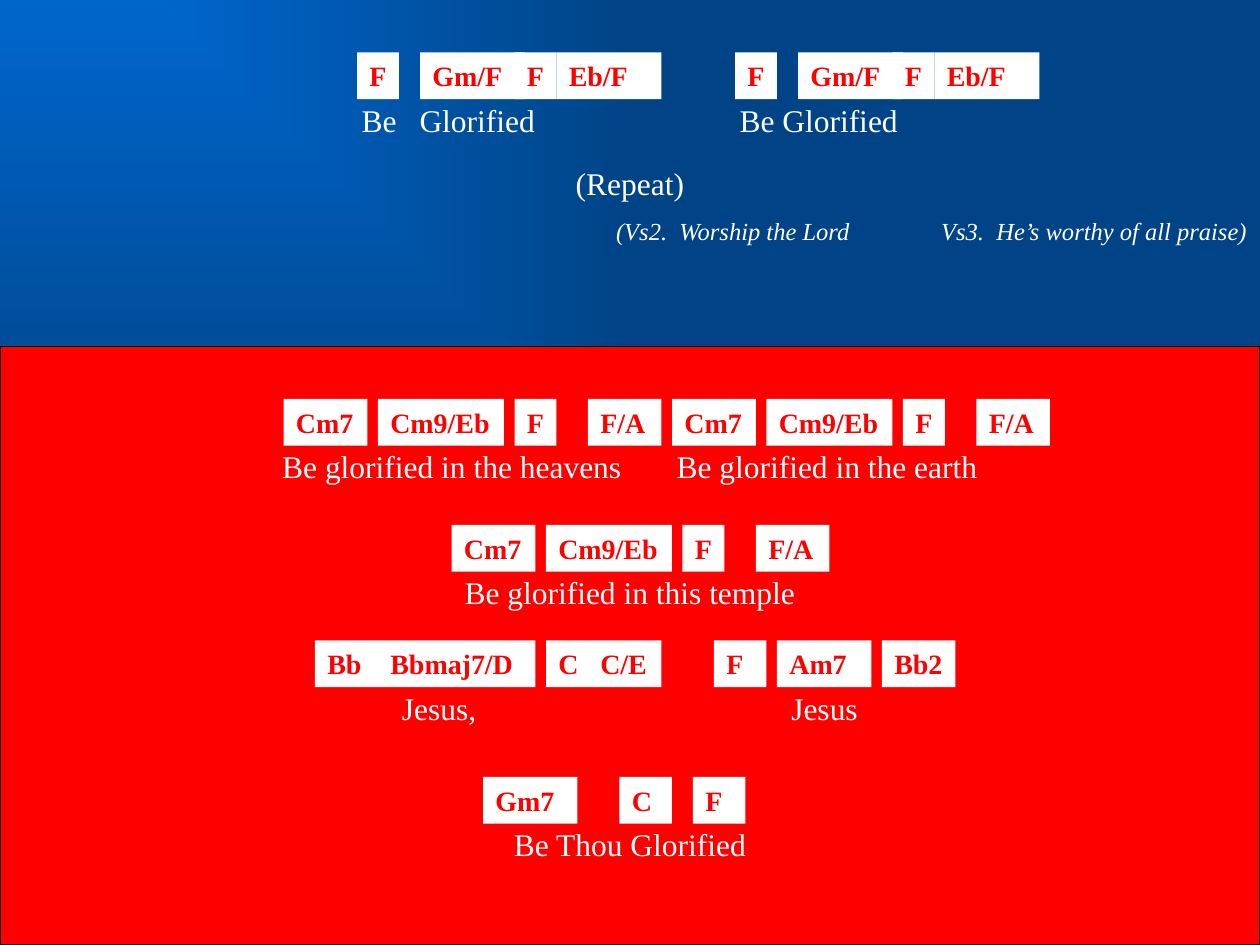
from lxml import etree
from pptx import Presentation
from pptx.dml.color import RGBColor
from pptx.enum.shapes import MSO_SHAPE
from pptx.enum.text import MSO_ANCHOR, MSO_AUTO_SIZE, PP_ALIGN
from pptx.oxml.ns import qn
from pptx.util import Inches, Pt

RECTANGLE = MSO_SHAPE.RECTANGLE
TOP = MSO_ANCHOR.TOP
GROW = MSO_AUTO_SIZE.SHAPE_TO_FIT_TEXT
LEFT, CENTER = PP_ALIGN.LEFT, PP_ALIGN.CENTER

COLORS = {"glow": "0066CC", "deep": "004487", "red": "FF0000",
          "white": "FFFFFF", "black": "000000"}
FONT = "Times New Roman"
LYRIC = {"size": Pt(18), "color": "white"}
VERSE_NOTE = {"size": Pt(14), "color": "white", "italic": True}
CHORD = {"size": Pt(16), "color": "red", "bold": True}

# Chords sit on a grid of twelfths of an inch: (name, offset, width)
GRID = 12
OPENING = [("F", 0, 4), ("Gm/F", 6, 10), ("F", 15, 4), ("Eb/F", 19, 10)]
GLORIFIED = [("Cm7", 0, 8), ("Cm9/Eb", 9, 12), ("F", 22, 4), ("F/A", 29, 7)]
JESUS = [("Bb", 0, 6), ("Bbmaj7/D", 6, 15), ("C", 22, 4), ("C/E", 26, 7),
         ("F", 38, 5), ("Am7", 44, 9), ("Bb2", 54, 7)]
ENDING = [("Gm7", 0, 9), ("C", 13, 5), ("F", 20, 5)]

# (top, left, chords), in grid units
CHORD_LINES = [(5, 34, OPENING), (5, 70, OPENING),
               (38, 27, GLORIFIED), (38, 64, GLORIFIED),
               (50, 43, GLORIFIED), (61, 30, JESUS), (74, 46, ENDING)]

# (top in grid units, height in inches, format, phrases with their left in
# inches; a line with one phrase and no left is centred)
LYRIC_LINES = [
    (9, 0.4, LYRIC, [("Be", 2.87), ("Glorified", 3.33), ("Be Glorified", 5.87)]),
    (15, 0.4, LYRIC, [("(Repeat)", None)]),
    (20, 0.33, VERSE_NOTE, [("(Vs2.  Worship the Lord", 4.89),
                            ("Vs3.  He’s worthy of all praise)", 7.47)]),
    (42, 0.4, LYRIC, [("Be glorified in the heavens", 2.24),
                      ("Be glorified in the earth", 5.37)]),
    (54, 0.4, LYRIC, [("Be glorified in this temple", None)]),
    (65, 0.4, LYRIC, [("Jesus,", 3.19), ("Jesus", 6.28)]),
    (78, 0.4, LYRIC, [("Be Thou Glorified", None)]),
]


def color(name):
    return RGBColor.from_string(COLORS[name])


def paint_background(slide):
    """Fill the slide with a gradient that spreads from the top left corner."""
    fill = slide.background.fill
    fill.gradient()
    for stop, (position, name) in zip(fill.gradient_stops,
                                      [(0, "glow"), (1, "deep")]):
        stop.position = position
        stop.color.rgb = color(name)
    gradient = slide.element.find(".//" + qn("a:gradFill"))
    gradient.remove(gradient.find(qn("a:lin")))
    spread = etree.Element(qn("a:path"), {"path": "rect"})
    etree.SubElement(spread, qn("a:fillToRect"), {"r": "100000", "b": "100000"})
    gradient.find(qn("a:gsLst")).addnext(spread)


def add_rectangle(slide, left, top, width, height, fill):
    shape = slide.shapes.add_shape(RECTANGLE, Inches(left), Inches(top),
                                   Inches(width), Inches(height))
    shape.shadow.inherit = False
    shape.fill.solid()
    shape.fill.fore_color.rgb = color(fill)
    return shape


def write(shape, text, style, alignment):
    frame = shape.text_frame
    frame_format = {"word_wrap": True, "auto_size": GROW,
                    "vertical_anchor": TOP, "margin_right": 0}
    if alignment == CENTER:
        del frame_format["margin_right"]
    for name, value in frame_format.items():
        setattr(frame, name, value)
    paragraph = frame.paragraphs[0]
    paragraph.alignment = alignment
    run = paragraph.add_run()
    run.text = text
    run.font.name = FONT
    for name, value in style.items():
        if name == "color":
            run.font.color.rgb = color(value)
        else:
            setattr(run.font, name, value)
    return paragraph


def add_lyric_line(slide, top, height, style, phrases):
    """Start each phrase at its own left: the first by inset, others by tab."""
    box = slide.shapes.add_textbox(0, Inches(top / GRID), Inches(10),
                                   Inches(height))
    start = phrases[0][1]
    text = "\t".join(phrase for phrase, _ in phrases)
    paragraph = write(box, text, style, CENTER if start is None else LEFT)
    if start is None:
        return
    box.text_frame.margin_left = Inches(start)
    properties = paragraph._p.get_or_add_pPr()
    tabs = etree.SubElement(properties, qn("a:tabLst"))
    for _, left in phrases[1:]:
        etree.SubElement(tabs, qn("a:tab"),
                         {"pos": str(Inches(left - start)), "algn": "l"})


def add_chord_line(slide, top, start, chords):
    for name, offset, width in chords:
        box = add_rectangle(slide, (start + offset) / GRID, top / GRID,
                            width / GRID, 0.37, "white")
        box.line.fill.background()
        write(box, name, CHORD, LEFT)


def main():
    presentation = Presentation()
    presentation.slide_width = Inches(10)
    presentation.slide_height = Inches(7.5)
    slide = presentation.slides.add_slide(presentation.slide_layouts[6])
    paint_background(slide)

    chorus_panel = add_rectangle(slide, 0, 2.75, 10, 4.75, "red")
    chorus_panel.line.color.rgb = color("black")
    chorus_panel.line.width = Pt(0.75)

    for line in LYRIC_LINES:
        add_lyric_line(slide, *line)
    for line in CHORD_LINES:
        add_chord_line(slide, *line)
    presentation.save("out.pptx")


if __name__ == "__main__":
    main()
